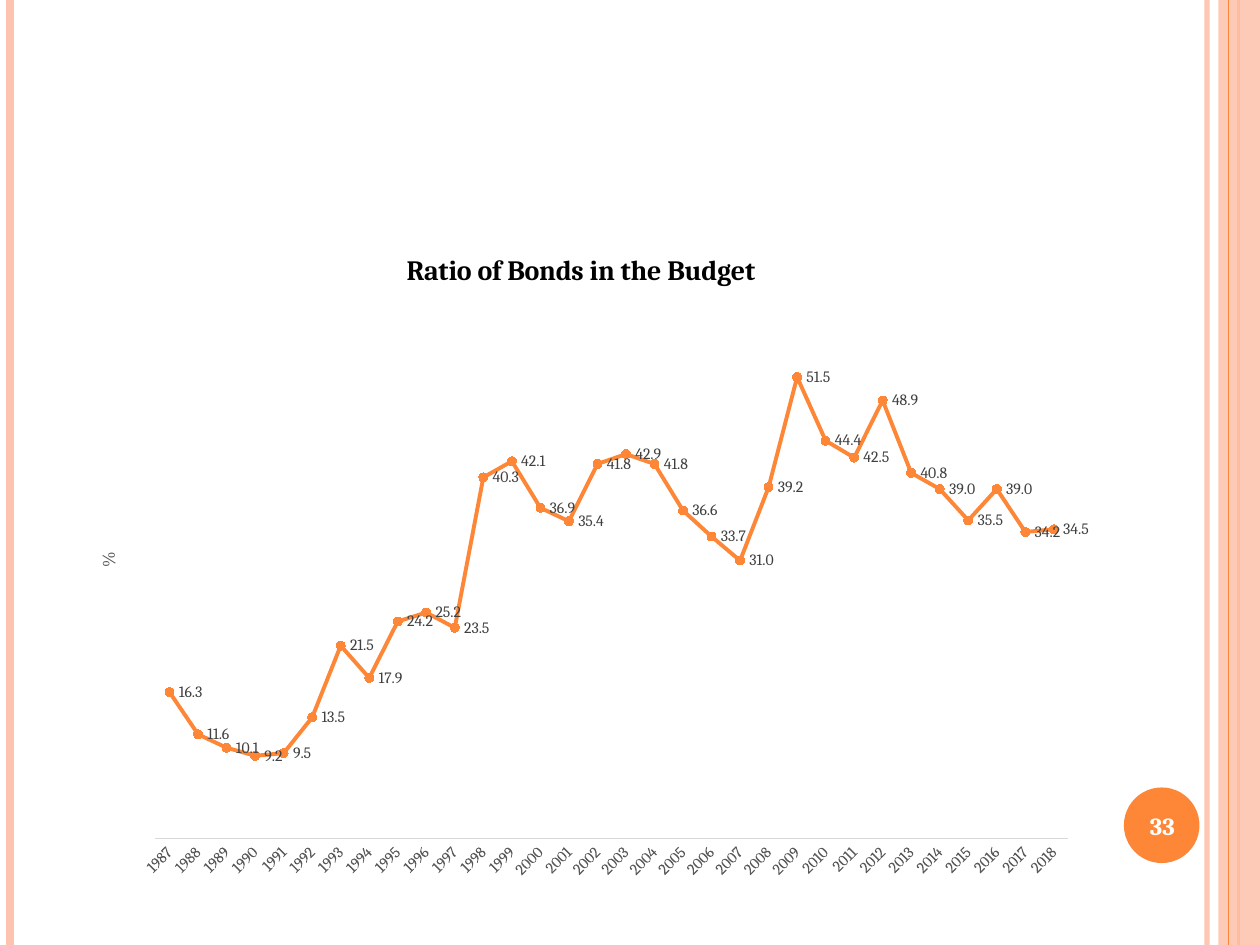
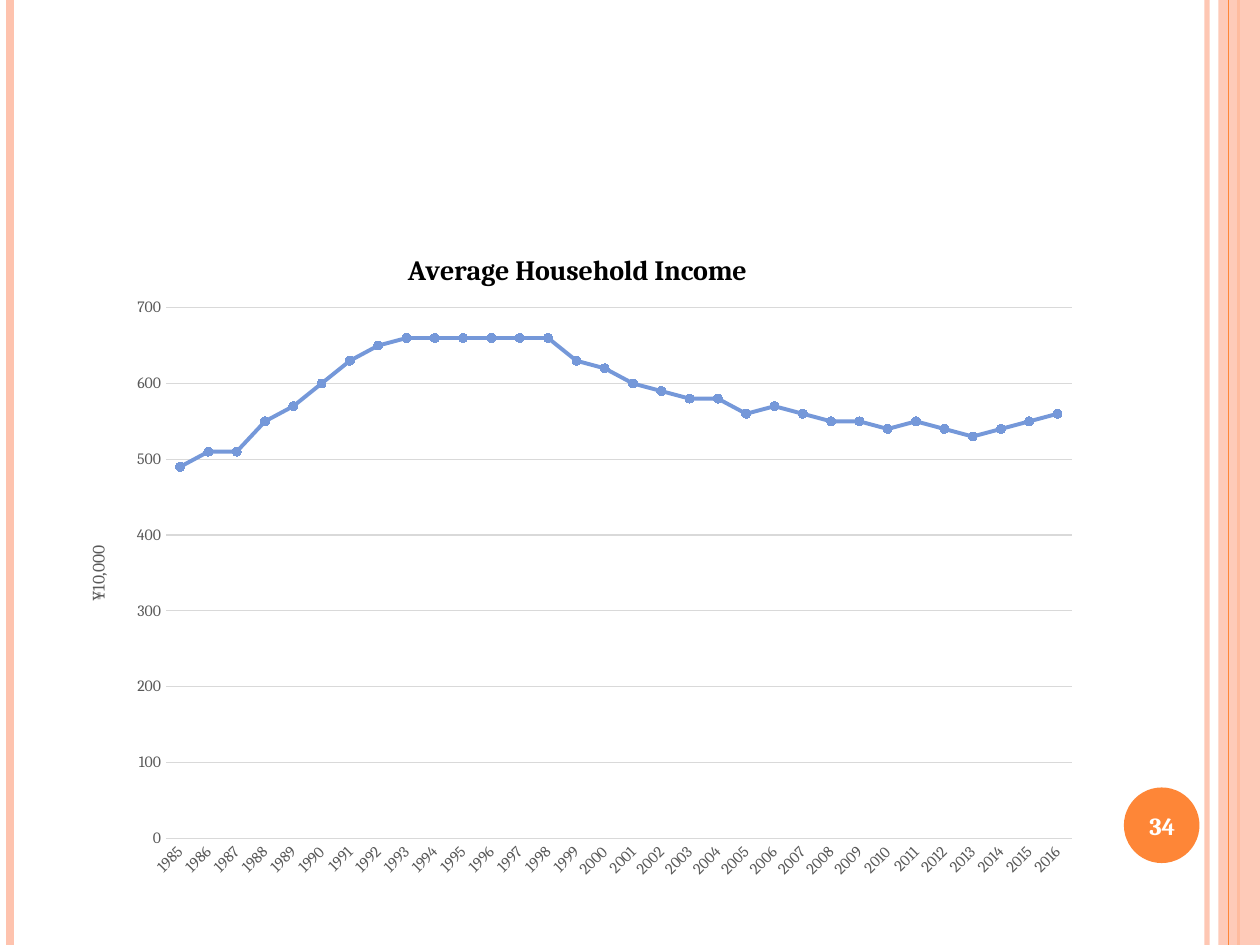
"""Build two slides with line charts on bond ratio and household income."""
from dataclasses import dataclass

import lxml.etree
import pptx
import pptx.chart.data
import pptx.dml.color
import pptx.enum.chart
import pptx.enum.shapes
import pptx.enum.text
import pptx.oxml.ns
import pptx.util

Inches = pptx.util.Inches
Pt = pptx.util.Pt
qn = pptx.oxml.ns.qn

FONT = "Cambria"
ORANGE, PEACH, BLUE = "FE8637", "FEC3AE", "7598D9"
BLACK, WHITE = "000000", "FFFFFF"
GRAY, DARK, PALE = "595959", "404040", "D9D9D9"


@dataclass
class Rule:
    x: float
    width: float
    color: str
    alpha: int = 100


@dataclass
class Graph:
    number: int
    title: str
    title_at: tuple
    unit: str
    unit_at: tuple
    plot_at: tuple
    start: int
    values: list
    color: str
    top: int
    step: int
    labels: bool


BACK = [Rule(9.58, 3, PEACH, 93), Rule(0.08, 4.5, PEACH), Rule(9.83, 1.5, ORANGE)]
FRONT = Rule(9.75, 0.75, ORANGE)

GRAPHS = [
    Graph(33, "Ratio of Bonds in the Budget", (0.33, 0.04), "%", (0.03, 0.49),
          (0.09, 0.12, 0.89, 0.8), 1987,
          [16.3, 11.6, 10.1, 9.2, 9.5, 13.5, 21.5, 17.9, 24.2, 25.2, 23.5,
           40.3, 42.1, 36.9, 35.4, 41.8, 42.9, 41.8, 36.6, 33.7, 31, 39.2,
           51.5, 44.4, 42.5, 48.9, 40.8, 39, 35.5, 39, 34.2, 34.5],
          ORANGE, 60, 10, True),
    Graph(34, "Average Household Income", (0.33, 0.04), "¥10,000", (0.02, 0.48),
          (0.1, 0.13, 0.88, 0.79), 1985,
          [490, 510, 510, 550, 570, 600, 630, 650, 660, 660, 660,
           660, 660, 660, 630, 620, 600, 590, 580, 580, 560, 570,
           560, 550, 550, 540, 550, 540, 530, 540, 550, 560],
          BLUE, 700, 100, False),
]


def paint(fill, color: str) -> None:
    """Fill a shape, line or font with a solid colour."""
    fill.solid()
    fill.fore_color.rgb = pptx.dml.color.RGBColor.from_string(color)


def fade(shape, alpha: int) -> None:
    """Make the first colour of a shape partly clear."""
    color = shape.element.xpath(".//a:srgbClr")[0]
    lxml.etree.SubElement(color, qn("a:alpha")).set("val", str(alpha * 1000))


def style(font, size: float, color: str, bold: bool = False) -> None:
    """Set the face, size, colour and weight of a font."""
    font.name, font.size, font.bold = FONT, Pt(size), bold
    paint(font.fill, color)


def stroke(line, color: str, width: float) -> None:
    """Set the colour and width of a line."""
    paint(line.fill, color)
    line.width = Pt(width)


def draw_rule(slide, rule: Rule):
    """Draw a line down the full height of the slide."""
    shape = slide.shapes.add_connector(
        pptx.enum.shapes.MSO_CONNECTOR.STRAIGHT,
        Inches(rule.x), Inches(0), Inches(rule.x), Inches(7.5))
    stroke(shape.line, rule.color, rule.width)
    if rule.alpha < 100:
        fade(shape, rule.alpha)
    lxml.etree.SubElement(shape.element.spPr, qn("a:effectLst"))
    return shape


def draw_shape(slide, kind, box: tuple, color: str):
    """Draw a plain filled shape."""
    shape = slide.shapes.add_shape(kind, *map(Inches, box))
    shape.shadow.inherit = False
    paint(shape.fill, color)
    shape.line.fill.background()
    return shape


def dress_master(deck, slide) -> None:
    """Draw the bands and badge once and move them to the master."""
    kinds = pptx.enum.shapes.MSO_SHAPE
    parts = [draw_rule(slide, rule) for rule in BACK]
    band = draw_shape(slide, kinds.RECTANGLE, (9.67, 0, 0.33, 7.5), PEACH)
    fade(band, 87)
    parts += [band, draw_rule(slide, FRONT),
              draw_shape(slide, kinds.OVAL, (8.92, 6.25, 0.6, 0.6), ORANGE)]
    for part in parts:
        deck.slide_master.shapes.element.append(part.element)


def place(parent, spot: tuple) -> None:
    """Give a chart title or plot area a fixed place."""
    for old in parent.findall(qn("c:layout")):
        parent.remove(old)
    layout = lxml.etree.Element(qn("c:layout"))
    manual = lxml.etree.SubElement(layout, qn("c:manualLayout"))
    items = [("xMode", "edge"), ("yMode", "edge"), *zip("xywh", spot)]
    if len(spot) == 4:
        items.insert(0, ("layoutTarget", "inner"))
    for name, value in items:
        lxml.etree.SubElement(manual, qn(f"c:{name}")).set("val", str(value))
    parent.insert(0 if parent.find(qn("c:tx")) is None else 1, layout)


def write(frame, text: str, size: float, color: str, bold: bool = False):
    """Add one styled run to the first paragraph of a frame."""
    para = frame.paragraphs[0]
    run = para.add_run()
    run.text = text
    style(run.font, size, color, bold)
    return para


def draw_number(slide, number: int) -> None:
    """Write the slide number over the badge."""
    box = slide.shapes.add_textbox(*map(Inches, (8.89, 6.27, 0.67, 0.57)))
    frame = box.text_frame
    frame.word_wrap = True
    frame.vertical_anchor = pptx.enum.text.MSO_ANCHOR.MIDDLE
    para = write(frame, str(number), 14, WHITE, True)
    para.alignment = pptx.enum.text.PP_ALIGN.CENTER


def style_axes(chart, graph: Graph) -> None:
    """Format both axes and the unit title."""
    none = pptx.enum.chart.XL_TICK_MARK.NONE
    years, scale = chart.category_axis, chart.value_axis
    for axis in (years, scale):
        axis.major_tick_mark = axis.minor_tick_mark = none
        style(axis.tick_labels.font, 9, GRAY)
    stroke(years.format.line, PALE, 0.75)
    turn = chart.element.xpath(".//c:catAx/c:txPr/a:bodyPr")[0]
    turn.set("rot", "-2700000")
    scale.minimum_scale, scale.maximum_scale = 0, graph.top
    scale.major_unit = graph.step
    scale.format.line.fill.background()
    scale.has_major_gridlines = not graph.labels
    scale.visible = not graph.labels
    if not graph.labels:
        stroke(scale.major_gridlines.format.line, PALE, 0.75)
    title = scale.axis_title
    write(title.text_frame, graph.unit, 10, GRAY)
    body = title.element.xpath(".//a:bodyPr")[0]
    body.set("rot", "-5400000")
    body.set("vert", "horz")
    place(title.element, graph.unit_at)


def style_series(plot, graph: Graph) -> None:
    """Format the line, its markers and its labels."""
    plot.vary_by_categories = False
    series = plot.series[0]
    series.smooth = False
    stroke(series.format.line, graph.color, 2.25)
    mark = series.marker
    mark.style, mark.size = pptx.enum.chart.XL_MARKER_STYLE.CIRCLE, 5
    paint(mark.format.fill, graph.color)
    paint(mark.format.line.fill, graph.color)
    if graph.labels:
        labels = series.data_labels
        labels.show_value = True
        labels.number_format, labels.number_format_is_linked = "0.0_ ", False
        labels.position = pptx.enum.chart.XL_LABEL_POSITION.RIGHT
        style(labels.font, 9, DARK)


def draw_graph(slide, graph: Graph) -> None:
    """Add the line chart of a slide."""
    data = pptx.chart.data.CategoryChartData()
    data.categories = [str(graph.start + i) for i in range(len(graph.values))]
    data.add_series("Series 1", graph.values)
    chart = slide.shapes.add_chart(
        pptx.enum.chart.XL_CHART_TYPE.LINE_MARKERS,
        *map(Inches, (0.5, 1.75, 8.17, 5.33)), data).chart
    style(chart.font, 10, BLACK)
    chart.has_legend = False
    title = chart.chart_title
    write(title.text_frame, graph.title, 16, BLACK, True)
    title.include_in_layout = False
    place(title.element, graph.title_at)
    place(chart.element.xpath(".//c:plotArea")[0], graph.plot_at)
    style_axes(chart, graph)
    style_series(chart.plots[0], graph)


def main() -> None:
    """Build and save the deck."""
    deck = pptx.Presentation()
    deck.slide_width, deck.slide_height = Inches(10), Inches(7.5)
    paint(deck.slide_master.background.fill, WHITE)
    slides = [deck.slides.add_slide(deck.slide_layouts[6]) for _ in GRAPHS]
    dress_master(deck, slides[0])
    for slide, graph in zip(slides, GRAPHS):
        draw_number(slide, graph.number)
        draw_graph(slide, graph)
    deck.save("out.pptx")


if __name__ == "__main__":
    main()
